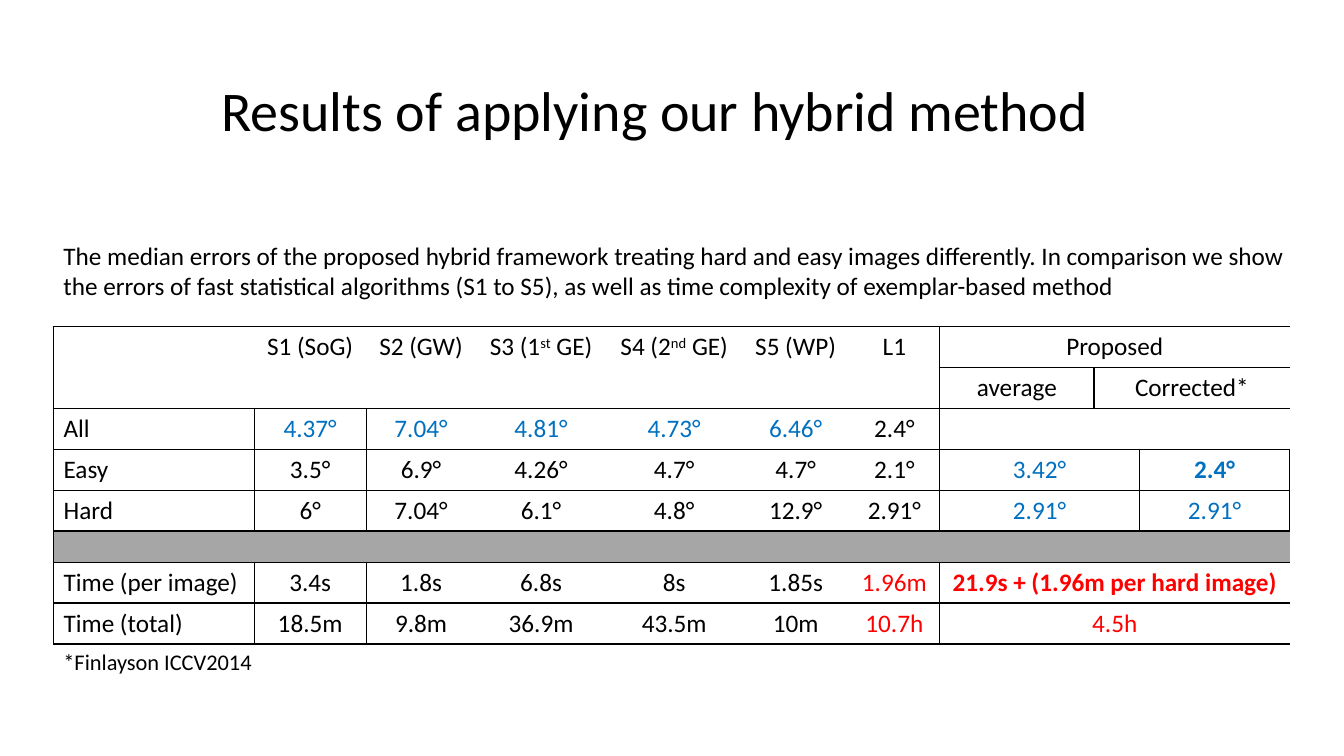
"""Build the slide with the results of the hybrid method."""
from lxml.etree import SubElement
from pptx import Presentation
from pptx.dml.color import RGBColor
from pptx.enum.text import MSO_ANCHOR, PP_ALIGN
from pptx.oxml.ns import qn
from pptx.util import Inches, Pt

COLORS = {"ink": "000000", "blue": "0070C0", "red": "FF0000", "band": "A6A6A6"}
EDGES = {"L": "a:lnL", "R": "a:lnR", "T": "a:lnT", "B": "a:lnB"}
COLUMNS = [14.93, 8.33, 8.18, 9.68, 10.13, 7.95, 6.75, 11.48, 3.38, 11.18]
ROW, BAND_ROW, BAND_INDEX = 5.4, 4.13, 5
BODY_EDGES = ["LRTB", "LTB", "TB", "TB", "TB", "TB", "TBR"]
HEADINGS = ["", "S1 (SoG)", "S2 (GW)", "S3 (1^st^ GE)", "S4 (2^nd^ GE)",
            "S5 (WP)", "L1"]
BODY = {
    2: ["All", "4.37°", "7.04°", "4.81°", "4.73°", "6.46°", "2.4°"],
    3: ["Easy", "3.5°", "6.9°", "4.26°", "4.7°", "4.7°", "2.1°"],
    4: ["Hard", "6°", "7.04°", "6.1°", "4.8°", "12.9°", "2.91°"],
    6: ["Time (per image)", "3.4s", "1.8s", "6.8s", "8s", "1.85s", "1.96m"],
    7: ["Time (total)", "18.5m", "9.8m", "36.9m", "43.5m", "10m", "10.7h"],
}
SPANNING = [
    (0, 7, 3, "Proposed", "LRTB", {}),
    (1, 0, 7, "", "LRB", {}),
    (1, 7, 1, "average", "LRTB", {}),
    (1, 8, 2, "Corrected*", "LRTB", {}),
    (2, 7, 3, "", "LTR", {}),
    (3, 7, 2, "3.42°", "LB", {"color": "blue"}),
    (3, 9, 1, "2.4°", "RB", {"color": "blue", "bold": True}),
    (4, 7, 2, "2.91°", "LTB", {"color": "blue"}),
    (4, 9, 1, "2.91°", "TRB", {"color": "blue"}),
    (6, 7, 3, "21.9s + (1.96m per hard image)", "LRTB",
     {"color": "red", "bold": True}),
    (7, 7, 3, "4.5h", "LRTB", {"color": "red"}),
]


def write_text(frame, text, size=18, color="ink", bold=False,
               align=PP_ALIGN.LEFT, spacing=None):
    """Fill a text frame; parts between carets are superscript."""
    para = frame.paragraphs[0]
    para.alignment = align
    para.line_spacing = spacing
    for index, part in enumerate(text.split("^")):
        span = para.add_run()
        span.text = part
        span.font.name = "Calibri"
        span.font.size = Pt(size)
        span.font.bold = bold
        span.font.color.rgb = RGBColor.from_string(COLORS[color])
        if index % 2:
            span._r.get_or_add_rPr().set("baseline", "30000")


class SlideBuilder:
    """Hold the deck and its slide; lengths are percentages of the slide."""

    def __init__(self):
        self.deck = Presentation()
        self.deck.slide_width = Inches(13.33)
        self.deck.slide_height = Inches(7.5)
        self.page = self.deck.slides.add_slide(self.deck.slide_layouts[5])

    def across(self, share):
        """Turn a share of the width into a length."""
        return round(self.deck.slide_width * share / 100)

    def down(self, share):
        """Turn a share of the height into a length."""
        return round(self.deck.slide_height * share / 100)

    def area(self, left, top, width, height):
        """Turn four shares into a position and a size."""
        return (self.across(left), self.down(top),
                self.across(width), self.down(height))

    def title(self, text, *shares):
        """Place and fill the title placeholder."""
        box = self.page.shapes.title
        box.left, box.top, box.width, box.height = self.area(*shares)
        box.text_frame.vertical_anchor = MSO_ANCHOR.MIDDLE
        write_text(box.text_frame, text, size=40, align=PP_ALIGN.CENTER,
                   spacing=0.9)

    def text(self, text, *shares, **style):
        """Add a wrapping text box."""
        box = self.page.shapes.add_textbox(*self.area(*shares))
        box.text_frame.word_wrap = True
        write_text(box.text_frame, text, **style)

    def table(self, left, top, columns, rows):
        """Add a plain table without style or banding."""
        shares = left, top, sum(columns), sum(rows)
        table = self.page.shapes.add_table(
            len(rows), len(columns), *self.area(*shares)).table
        table.first_row = table.horz_banding = False
        style = table._tbl.tblPr.find(qn("a:tableStyleId"))
        style.text = "{2D5ABB26-0587-4C30-8999-92F81FD0307C}"
        for column, share in zip(table.columns, columns):
            column.width = self.across(share)
        for row, share in zip(table.rows, rows):
            row.height = self.down(share)
        return table

    def borders(self, cell, edges):
        """Draw the named edges of one cell."""
        for edge, tag in EDGES.items():
            if edge in edges:
                line = SubElement(cell._tc.get_or_add_tcPr(), qn(tag), w="12700")
                fill = SubElement(line, qn("a:solidFill"))
                SubElement(fill, qn("a:srgbClr"), val=COLORS["ink"])

    def cell(self, table, row, column, span, text, edges, fill=None, **style):
        """Merge, outline and fill the cells of one entry."""
        last = column + span - 1
        for index in range(column, last + 1):
            hidden = ("L" if index > column else "") + ("R" if index < last else "")
            part = table.cell(row, index)
            self.borders(part, set(edges) - set(hidden))
            if fill:
                part.fill.solid()
                part.fill.fore_color.rgb = RGBColor.from_string(COLORS[fill])
                part.margin_top = part.margin_bottom = 0
            else:
                part.fill.background()
        first = table.cell(row, column)
        if span > 1:
            first.merge(table.cell(row, last))
        if text:
            write_text(first.text_frame, text, **style)


def main():
    """Build and save the slide."""
    slide = SlideBuilder()
    slide.title("Results of applying our hybrid method", 3, 5.33, 91.45, 19.33)
    rows = [BAND_ROW if index == BAND_INDEX else ROW for index in range(8)]
    table = slide.table(3.98, 43.2, COLUMNS, rows)
    center = PP_ALIGN.CENTER
    for column, heading in enumerate(HEADINGS):
        edges = {0: "LT", 6: "TR"}.get(column, "T")
        slide.cell(table, 0, column, 1, heading, edges, align=center)
    for row, values in BODY.items():
        for column, value in enumerate(values):
            color = "ink"
            if row == 2 and 0 < column < 6:
                color = "blue"
            elif row > BAND_INDEX and column == 6:
                color = "red"
            slide.cell(table, row, column, 1, value, BODY_EDGES[column],
                       color=color, align=center if column else PP_ALIGN.LEFT)
    for row, column, span, text, edges, style in SPANNING:
        slide.cell(table, row, column, span, text, edges, align=center, **style)
    slide.cell(table, BAND_INDEX, 0, len(COLUMNS), "", "LRTB", fill="band")
    slide.text("The median errors of the proposed hybrid framework treating hard "
               "and easy images differently. In comparison we show the errors of "
               "fast statistical algorithms (S1 to S5), as well as time complexity "
               "of exemplar-based method", 3.98, 31.07, 93.77, 9.47)
    slide.text("*Finlayson ICCV2014", 3.98, 85.07, 66.69, 4.93, size=16)
    slide.deck.save("out.pptx")


if __name__ == "__main__":
    main()
